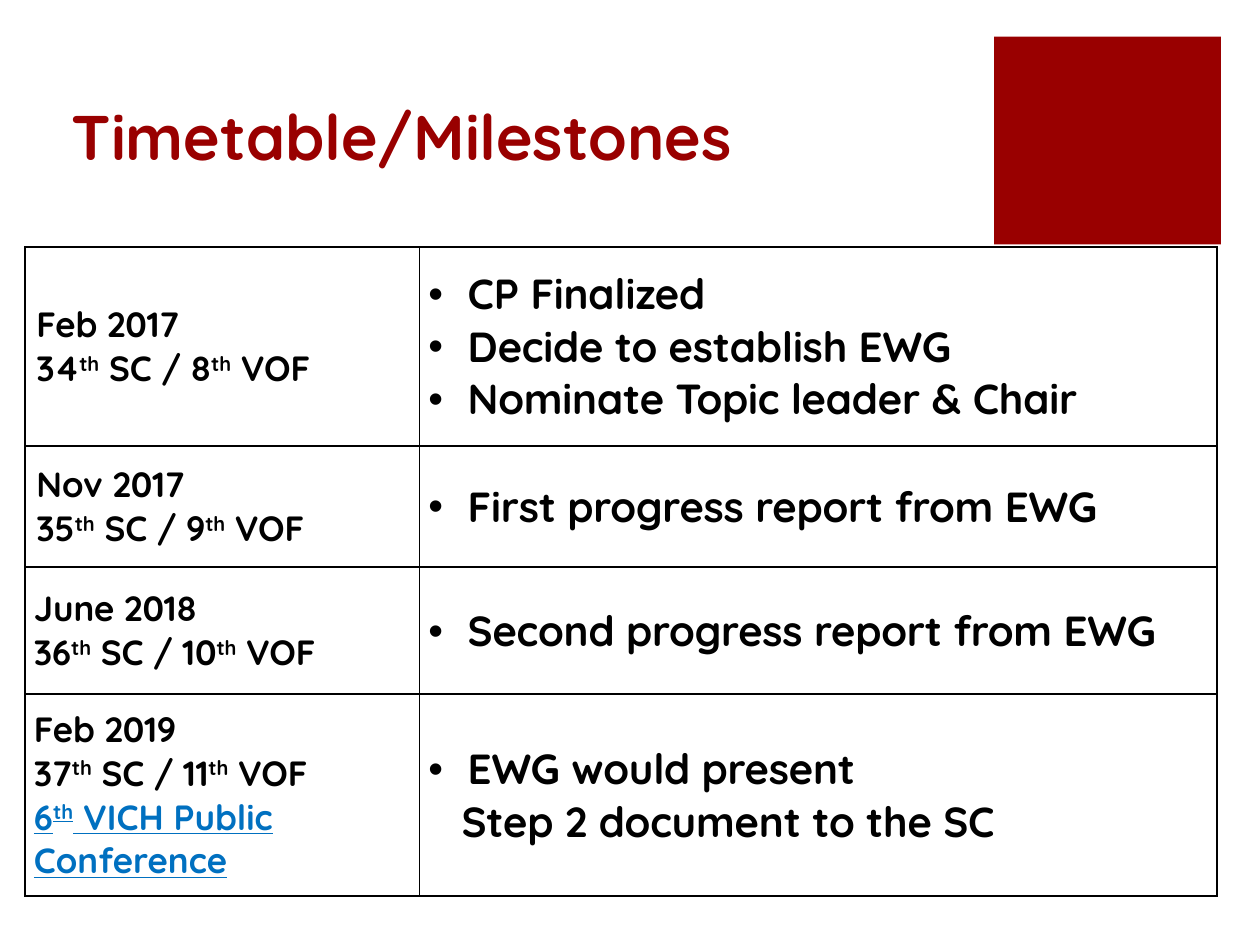
from dataclasses import dataclass

from lxml import etree
from pptx import Presentation
from pptx import util as u
from pptx.dml.color import RGBColor
from pptx.enum import shapes, text
from pptx.oxml import ns

Pt = u.Pt


@dataclass(frozen=True)
class Theme:
    font: str = "Quicksand"
    accent: str = "990000"
    ink: str = "000000"
    link: str = "0070C0"
    title_size: int = 36
    date_size: int = 20
    task_size: int = 24


THEME = Theme()
COLUMN_WIDTHS = (225.36, 455.76)
BULLET_INDENT = 22.5
CONTINUATION_INDENT = 19

# Per row: height, indent of the dates, dates, tasks, continuation of the last task.
# Text between ^ marks is superscript; a leading _ marks an underlined line.
MILESTONES = (
    (113.76, 1.44, ("Feb 2017", "34^th^ SC / 8^th^ VOF"),
     ("CP Finalized", "Decide to establish EWG", "Nominate Topic leader & Chair"), None),
    (69.12, 1.44, ("Nov 2017", "35^th^ SC / 9^th^ VOF"),
     ("First progress report from EWG",), None),
    (72.72, 0, ("June 2018", "36^th^ SC / 10^th^ VOF"),
     ("Second progress report from EWG",), None),
    (115.2, 0, ("Feb 2019", "37^th^ SC / 11^th^ VOF", "_6^th^ VICH Public Conference"),
     ("EWG would present",), "Step 2 document to the SC"),
)


def write_line(paragraph, line, *, size, color=THEME.ink, underline=None,
               spacing=0, indent=0, bullet=False, align=None):
    """Fill a paragraph, raising the parts between ^ marks."""
    paragraph.alignment = align
    properties = paragraph._p.get_or_add_pPr()
    properties.set("marL", str(Pt(indent)))
    properties.set("indent", str(-Pt(indent) if bullet else 0))
    if bullet:
        etree.SubElement(properties, ns.qn("a:buFont"), typeface="Arial")
        etree.SubElement(properties, ns.qn("a:buChar"), char="•")
    for index, part in enumerate(line.split("^")):
        run = paragraph.add_run()
        run.text = part
        font = run.font
        font.name, font.size, font.bold = THEME.font, Pt(size), True
        font.underline = underline
        font.color.rgb = RGBColor.from_string(color)
        if spacing:
            font._element.set("spc", str(round(spacing * 100)))
        if index % 2:
            font._element.set("baseline", "30000")


def next_paragraph(frame, index):
    return frame.add_paragraph() if index else frame.paragraphs[0]


def add_accent_square(slide):
    square = slide.shapes.add_shape(shapes.MSO_SHAPE.RECTANGLE,
                                    Pt(568.08), Pt(20.88), Pt(129.6), Pt(118.8))
    square.shadow.inherit = False
    square.fill.solid()
    square.fill.fore_color.rgb = RGBColor.from_string(THEME.accent)
    square.line.fill.background()


def add_title(slide, title):
    frame = slide.shapes.add_textbox(Pt(33.84), Pt(50.4), Pt(512.64), Pt(51.84)).text_frame
    frame.word_wrap = True
    frame.vertical_anchor = text.MSO_ANCHOR.BOTTOM
    write_line(frame.paragraphs[0], title, size=THEME.title_size, color=THEME.accent)


def format_cell(cell):
    cell.margin_left = cell.margin_right = Pt(5)
    cell.margin_top = cell.margin_bottom = 0
    cell.vertical_anchor = text.MSO_ANCHOR.MIDDLE
    cell.fill.background()
    properties = cell._tc.get_or_add_tcPr()
    for position, side in enumerate(("lnL", "lnR", "lnT", "lnB")):
        border = etree.Element(ns.qn(f"a:{side}"), w=str(Pt(1)))
        fill = etree.SubElement(border, ns.qn("a:solidFill"))
        etree.SubElement(fill, ns.qn("a:srgbClr"), val=THEME.ink)
        properties.insert(position, border)


def write_dates(frame, dates, indent):
    for index, line in enumerate(dates):
        linked = line.startswith("_")
        write_line(next_paragraph(frame, index), line.lstrip("_"), size=THEME.date_size,
                   color=THEME.link if linked else THEME.ink, underline=linked or None,
                   spacing=0 if linked else -0.1, indent=indent)


def write_tasks(frame, tasks, continuation):
    align = None if continuation else text.PP_ALIGN.JUSTIFY
    for index, line in enumerate(tasks):
        write_line(next_paragraph(frame, index), line, size=THEME.task_size, spacing=-0.1,
                   indent=BULLET_INDENT, bullet=True, align=align)
    if continuation:
        write_line(frame.add_paragraph(), continuation, size=THEME.task_size, spacing=-0.1,
                   indent=CONTINUATION_INDENT)


def add_milestone_table(slide):
    height = sum(milestone[0] for milestone in MILESTONES)
    table = slide.shapes.add_table(len(MILESTONES), len(COLUMN_WIDTHS), Pt(14.4), Pt(141.12),
                                   Pt(sum(COLUMN_WIDTHS)), Pt(height)).table
    table.first_row = table.horz_banding = False
    for column, width in zip(table.columns, COLUMN_WIDTHS):
        column.width = Pt(width)
    for row, (row_height, indent, dates, tasks, continuation) in zip(table.rows, MILESTONES):
        row.height = Pt(row_height)
        date_cell, task_cell = row.cells
        format_cell(date_cell)
        format_cell(task_cell)
        write_dates(date_cell.text_frame, dates, indent)
        write_tasks(task_cell.text_frame, tasks, continuation)


def main():
    presentation = Presentation()
    presentation.slide_width, presentation.slide_height = Pt(720), Pt(540)
    slide = presentation.slides.add_slide(presentation.slide_layouts[6])
    add_accent_square(slide)
    add_title(slide, "Timetable/Milestones")
    add_milestone_table(slide)
    presentation.save("out.pptx")


if __name__ == "__main__":
    main()
